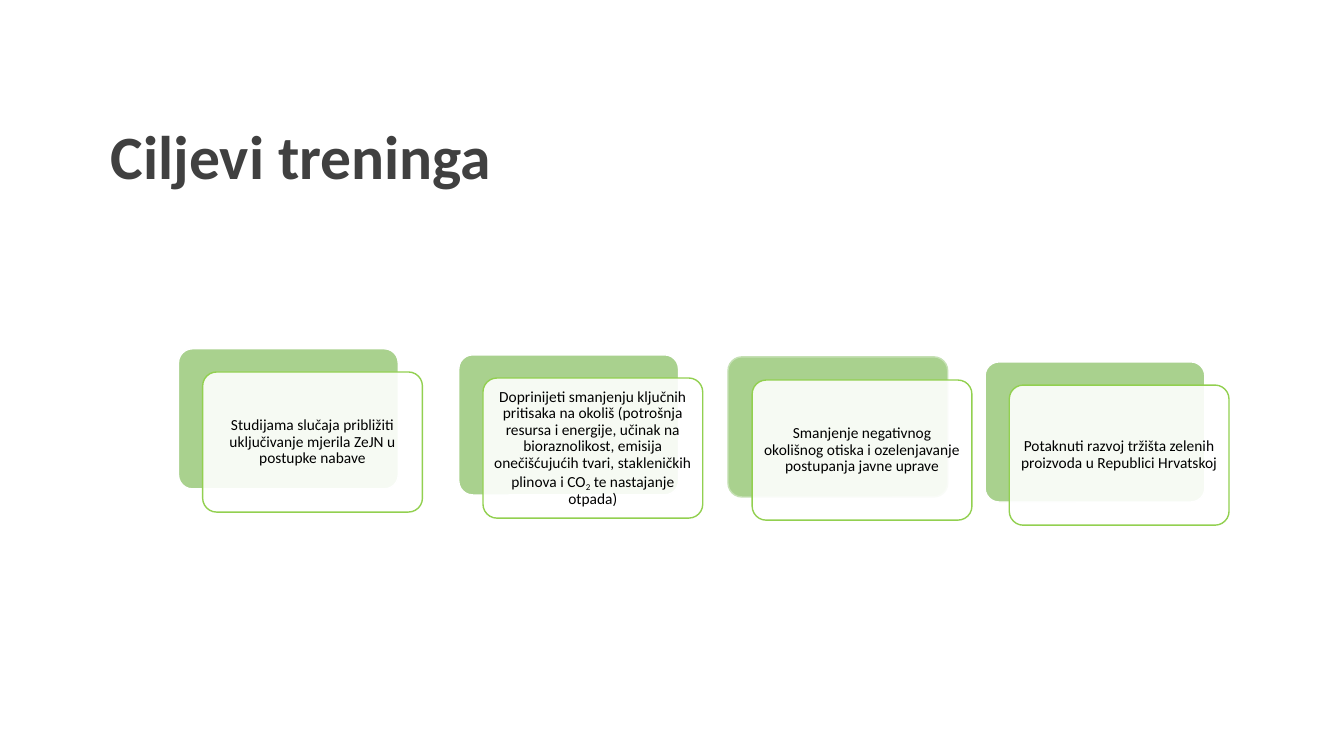
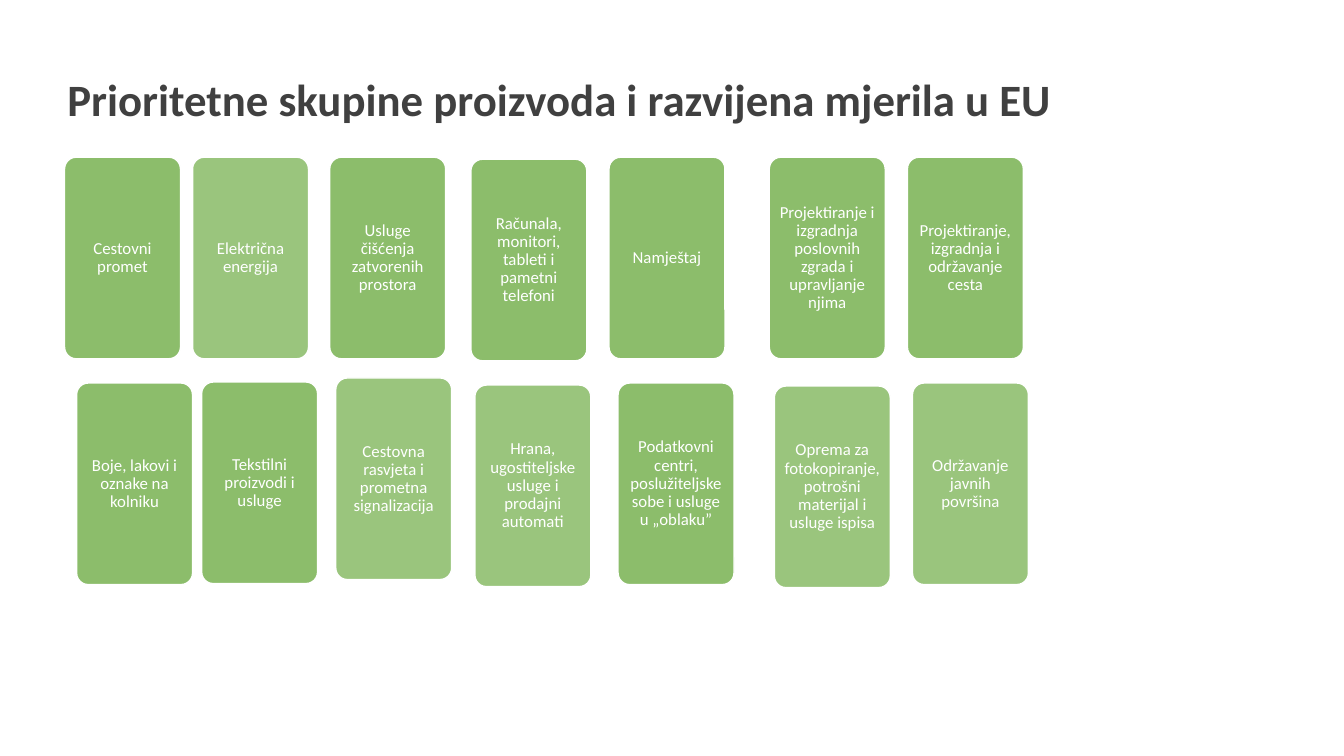
from dataclasses import dataclass
from typing import Any

from pptx import Presentation
from pptx import util as u
from pptx.dml.color import RGBColor
from pptx.enum import shapes, text
from pptx.oxml import ns, xmlchemy
from pptx.oxml import parse_xml
from pptx.shapes.autoshape import Shape
from pptx.slide import Slide

SCALE = 9144


@dataclass(frozen=True)
class Theme:
    face: str = "Calibri"
    title: str = "404040"
    ink: str = "000000"
    white: str = "FFFFFF"
    back: str = "A9D18E"
    edge: str = "92D050"
    pale: str = "C5E0B4"
    tile: str = "70AD47"
    dark: int = 80
    light: int = 70
    sheer: int = 90
    large: int = 44
    head: int = 32
    small: int = 11
    label: int = 12


@dataclass(frozen=True)
class Box:
    left: int
    top: int
    width: int
    height: int

    def shift(self, dx: int, dy: int) -> "Box":
        return Box(self.left + dx, self.top + dy, self.width, self.height)

    def emu(self) -> list[u.Emu]:
        return [px(n) for n in (self.left, self.top, self.width, self.height)]


@dataclass(frozen=True)
class Span:
    words: str
    base: int = 0


@dataclass(frozen=True)
class Style:
    size: int
    color: str
    bold: bool = False
    align: text.PP_ALIGN = text.PP_ALIGN.LEFT


@dataclass(frozen=True)
class Card:
    left: int
    top: int
    spans: tuple[Span, ...]
    edge: str


@dataclass(frozen=True)
class Tile:
    left: int
    top: int
    words: str
    alpha: int


THEME = Theme()
SMALL = Style(THEME.small, THEME.ink, align=text.PP_ALIGN.CENTER)
LABEL = Style(THEME.label, THEME.white, align=text.PP_ALIGN.CENTER)

CARDS = (
    Card(177, 346, (Span("Studijama slučaja približiti uključivanje mjerila ZeJN u postupke nabave"),), THEME.white),
    Card(455, 352, (
        Span("Doprinijeti smanjenju ključnih pritisaka na okoliš (potrošnja resursa i energije, "
             "učinak na bioraznolikost, emisija onečišćujućih tvari, stakleničkih plinova i CO"),
        Span("2", -25),
        Span(" te nastajanje otpada)"),
    ), THEME.white),
    Card(722, 354, (Span("Smanjenje negativnog okolišnog otiska i ozelenjavanje postupanja javne uprave"),), THEME.pale),
    Card(977, 359, (Span("Potaknuti razvoj tržišta zelenih proizvoda u Republici Hrvatskoj"),), THEME.white),
)

TILES = (
    Tile(64, 156, "Cestovni promet", THEME.dark),
    Tile(191, 156, "Električna energija", THEME.light),
    Tile(327, 156, "Usluge čišćenja zatvorenih prostora", THEME.dark),
    Tile(467, 158, "Računala, monitori, tableti i pametni telefoni", THEME.dark),
    Tile(604, 156, "Namještaj", THEME.dark),
    Tile(763, 156, "Projektiranje i izgradnja poslovnih zgrada i upravljanje njima", THEME.dark),
    Tile(900, 156, "Projektiranje, izgradnja i održavanje cesta", THEME.dark),
    Tile(76, 380, "Boje, lakovi i oznake na kolniku", THEME.dark),
    Tile(200, 379, "Tekstilni proizvodi i usluge", THEME.dark),
    Tile(333, 375, "Cestovna rasvjeta i prometna signalizacija", THEME.light),
    Tile(471, 382, "Hrana, ugostiteljske usluge i prodajni automati", THEME.light),
    Tile(613, 380, "Podatkovni centri, poslužiteljske sobe i usluge u „oblaku”", THEME.dark),
    Tile(768, 383, "Oprema za fotokopiranje, potrošni materijal i usluge ispisa", THEME.light),
    Tile(905, 380, "Održavanje javnih površina", THEME.light),
)


def px(count: int) -> u.Emu:
    return u.Emu(count * SCALE)


def rgb(code: str) -> RGBColor:
    return RGBColor.from_string(code)


def apply(item: Any, values: dict[str, Any]) -> None:
    for name, value in values.items():
        setattr(item, name, value)


def write(shape: Shape, spans: tuple[Span, ...], style: Style, pad: dict[str, int]) -> None:
    frame = shape.text_frame
    apply(frame, {"word_wrap": True, "vertical_anchor": text.MSO_ANCHOR.MIDDLE})
    apply(frame, {f"margin_{side}": px(size) for side, size in pad.items()})
    para = frame.paragraphs[0]
    apply(para, {"alignment": style.align, "line_spacing": 0.9})
    for span in spans:
        run = para.add_run()
        run.text = span.words
        apply(run.font, {"name": THEME.face, "size": u.Pt(style.size), "bold": style.bold})
        run.font.color.rgb = rgb(style.color)
        if span.base:
            run.font._element.set("baseline", str(span.base * 1000))


def title(slide: Slide, box: Box, words: str, size: int) -> None:
    shape = slide.shapes.add_textbox(*box.emu())
    pad = {"left": 10, "right": 10, "top": 5, "bottom": 5}
    write(shape, (Span(words),), Style(size, THEME.title, bold=True), pad)


def panel(slide: Slide, box: Box, fill: str, edge: str, alpha: int = 100) -> Shape:
    shape = slide.shapes.add_shape(shapes.MSO_SHAPE.ROUNDED_RECTANGLE, *box.emu())
    shape.adjustments[0] = 0.1
    shape.shadow.inherit = False
    shape.fill.solid()
    shape.fill.fore_color.rgb = rgb(fill)
    if alpha < 100:
        color = shape.element.spPr.find(ns.qn("a:solidFill"))[0]
        color.append(parse_xml(f'<a:alpha {ns.nsdecls("a")} val="{alpha * 1000}"/>'))
    shape.line.color.rgb = rgb(edge)
    shape.line.width = u.Pt(1)
    return shape


def label(shape: Shape, spans: tuple[Span, ...], style: Style) -> None:
    write(shape, spans, style, dict.fromkeys(("left", "right", "top", "bottom"), 5))


def goals(slide: Slide) -> None:
    title(slide, Box(100, 104, 1043, 109), "Ciljevi treninga", THEME.large)
    for card in CARDS:
        box = Box(card.left, card.top, 218, 139)
        panel(slide, box, THEME.back, card.edge)
        front = panel(slide, box.shift(24, 23), THEME.white, THEME.edge, THEME.sheer)
        label(front, card.spans, SMALL)


def groups(slide: Slide) -> None:
    title(slide, Box(57, 47, 1043, 109), "Prioritetne skupine proizvoda i razvijena mjerila u EU", THEME.head)
    for tile in TILES:
        box = Box(tile.left, tile.top, 115, 200)
        shape = panel(slide, box, THEME.tile, THEME.white, tile.alpha)
        label(shape, (Span(tile.words),), LABEL)


def main() -> None:
    deck = Presentation()
    apply(deck, {"slide_width": px(1333), "slide_height": px(750)})
    for draw in (goals, groups):
        draw(deck.slides.add_slide(deck.slide_layouts[6]))
    deck.save("out.pptx")


if __name__ == "__main__":
    main()
